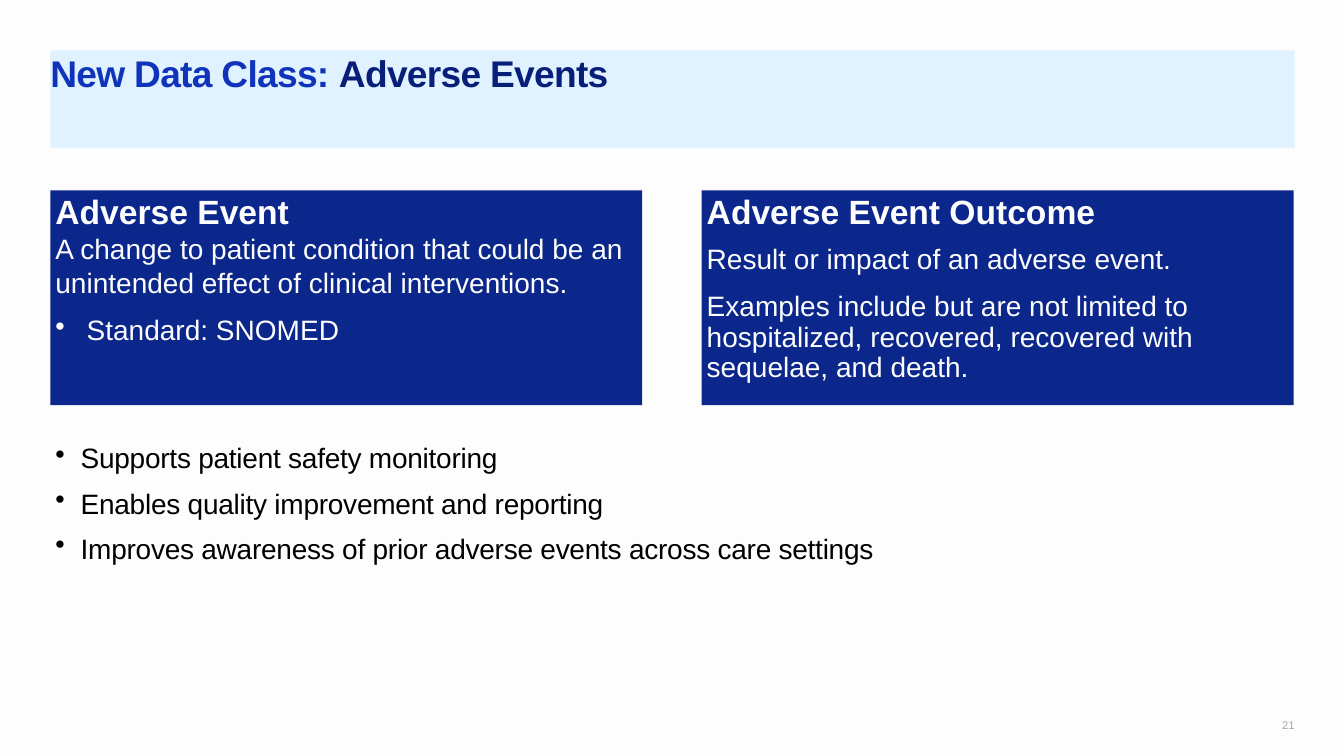
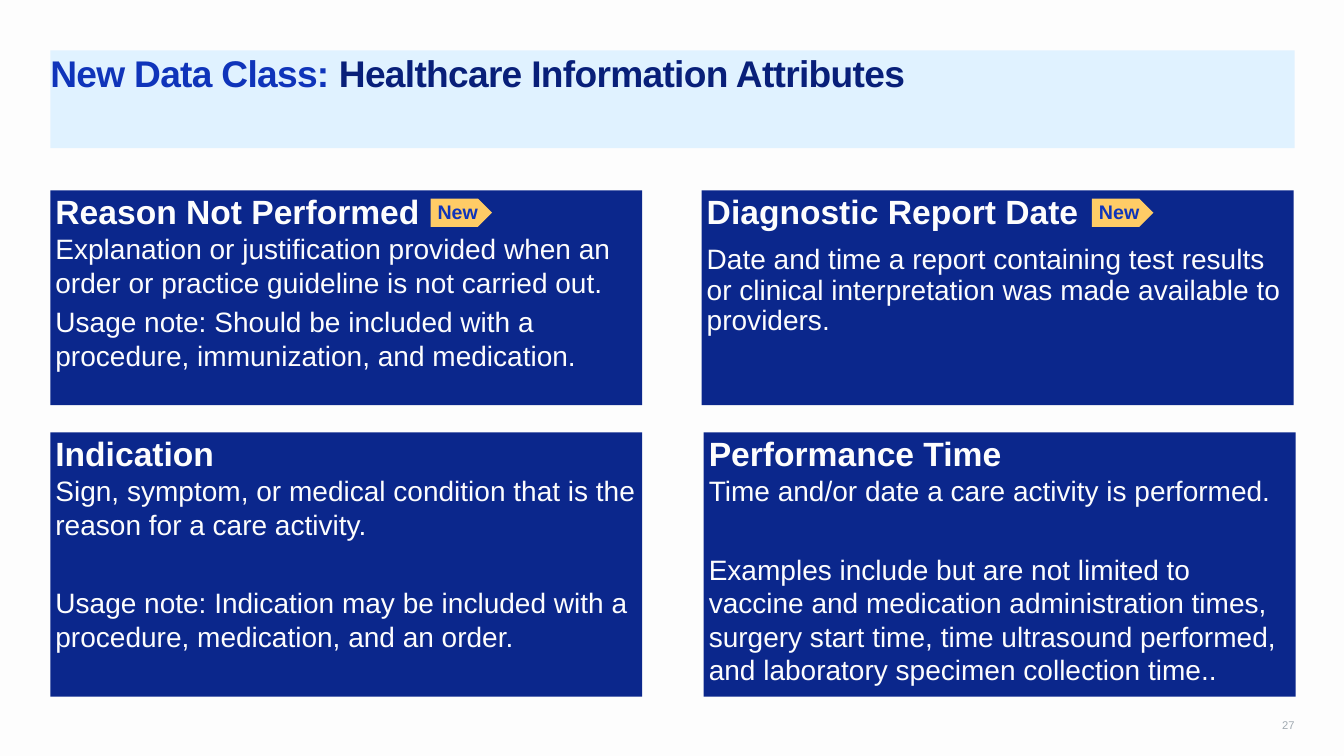
from pptx import Presentation
from pptx.dml.color import RGBColor
from pptx.enum.shapes import MSO_SHAPE
from pptx.enum.text import MSO_ANCHOR, PP_ALIGN
from pptx.oxml.ns import qn
from pptx.util import Pt
from lxml import etree

RECT, TAG = MSO_SHAPE.RECTANGLE, MSO_SHAPE.PENTAGON
TOP, MID, LOW = MSO_ANCHOR.TOP, MSO_ANCHOR.MIDDLE, MSO_ANCHOR.BOTTOM
LEFT, MIDST, RIGHT = PP_ALIGN.LEFT, PP_ALIGN.CENTER, PP_ALIGN.RIGHT

PX = 9144  # 100 px to the inch
PAD = (5, 5, 5, 5)
COLORS = {
    "page": "FDFDFD", "band": "E0F2FF", "card": "0B278C", "tag": "FFCC66",
    "lead": "0F34BA", "topic": "081F79", "white": "FDFDFD",
    "black": "000000", "number": "A1AAB1",
}

# Column and row bounds of the cards: (start, length)
WIDTH, X1, X2 = 587, 50, 696
ROW1, ROW2 = (189, 213), (429, 262)

# Each style: paragraph format, font format, colour
STYLES = {
    "title": ({}, {"size": Pt(26.5), "bold": True}, "lead"),
    "number": ({"alignment": RIGHT, "line_spacing": 0.9},
               {"size": Pt(8)}, "number"),
    "tag": ({"alignment": MIDST, "line_spacing": 0.9},
            {"size": Pt(14), "bold": True}, "lead"),
    "head": ({"line_spacing": 0.9}, {"size": Pt(24), "bold": True}, "white"),
    "body": ({"space_after": Pt(4)}, {"size": Pt(20)}, "white"),
    "apart": ({"space_before": Pt(28), "space_after": Pt(4)},
              {"size": Pt(20)}, "white"),
    "tight": ({"line_spacing": 0.9, "space_before": Pt(10)},
              {"size": Pt(20)}, "white"),
    "loose": ({"line_spacing": 0.9, "space_before": Pt(12)},
              {"size": Pt(20)}, "white"),
    "item": ({"space_before": Pt(6), "space_after": Pt(4)},
             {"size": Pt(20)}, "white"),
    "first": ({"line_spacing": 1.1}, {"size": Pt(20)}, "black"),
    "point": ({"line_spacing": 1.1, "space_before": Pt(6)},
              {"size": Pt(20)}, "black"),
}
INDENTS = {"item": 31, "first": 25, "point": 25}
TRACKS = {"title": -50, "first": -20, "point": -20}


def rgb(name):
    return RGBColor.from_string(COLORS[name])


def assign(target, values):
    for name, value in values.items():
        setattr(target, name, value)


def add_run(para, text, style, color=None):
    _, font, ink = STYLES[style]
    run = para.add_run()
    run.text = text
    assign(run.font, {"name": "Arial", "bold": False, **font})
    run.font.color.rgb = rgb(color or ink)
    if style in TRACKS:
        run.font._element.set("spc", str(TRACKS[style]))


def add_bullet(para, indent):
    props = para._p.get_or_add_pPr()
    props.set("marL", str(indent * PX))
    props.set("indent", str(-indent * PX))
    etree.SubElement(props, qn("a:buChar")).set("char", "•")


def fill_text(shape, lines, pad=PAD, anchor=TOP):
    """Write (style, text) lines and return the last paragraph."""
    frame = shape.text_frame
    sides = ("margin_left", "margin_top", "margin_right", "margin_bottom")
    assign(frame, {side: gap * PX for side, gap in zip(sides, pad)})
    assign(frame, {"word_wrap": True, "vertical_anchor": anchor})
    for i, (style, text) in enumerate(lines):
        para = frame.add_paragraph() if i else frame.paragraphs[0]
        assign(para, {"alignment": LEFT, **STYLES[style][0]})
        if style in INDENTS:
            add_bullet(para, INDENTS[style])
        add_run(para, text, style)
    return para


def add_box(slide, box, color, kind=RECT):
    shape = slide.shapes.add_shape(kind, *(n * PX for n in box))
    shape.shadow.inherit = False
    shape.fill.solid()
    shape.fill.fore_color.rgb = rgb(color)
    shape.line.fill.background()
    return shape


def add_text(slide, box, lines, **options):
    shape = slide.shapes.add_textbox(*(n * PX for n in box))
    fill_text(shape, lines, **options)


def add_card(slide, left, row, head, *lines):
    top, height = row
    card = add_box(slide, (left, top, WIDTH, height), "card")
    fill_text(card, [("head", head), *lines])


def add_tag(slide, left):
    tag = add_box(slide, (left, 197, 61, 28), "tag", TAG)
    fill_text(tag, [("tag", "New")], anchor=MID)


def add_page(deck, topic, number):
    slide = deck.slides.add_slide(deck.slide_layouts[6])
    slide.background.fill.solid()
    slide.background.fill.fore_color.rgb = rgb("page")
    add_text(slide, (1254, 689, 30, 37), [("number", number)],
             pad=(0, 0, 0, 0), anchor=LOW)
    band = add_box(slide, (50, 50, 1234, 97), "band")
    para = fill_text(band, [("title", "New Data Class: ")], pad=(0, 0, 0, 5))
    add_run(para, topic, "title", "topic")
    return slide


def add_events(deck):
    slide = add_page(deck, "Adverse Events", "21")
    add_text(slide, (50, 429, 1233, 258), [
        ("first", "Supports patient safety monitoring"),
        ("point", "Enables quality improvement and reporting"),
        ("point", "Improves awareness of prior adverse events across care "
                  "settings"),
    ])
    add_card(slide, X1, ROW1, "Adverse Event",
             ("body", "A change to patient condition that could be an "
                      "unintended effect of clinical interventions."),
             ("item", "Standard: SNOMED"))
    add_card(slide, X2, ROW1, "Adverse Event Outcome",
             ("tight", "Result or impact of an adverse event."),
             ("loose", "Examples include but are not limited to "
                       "hospitalized, recovered, recovered with sequelae, "
                       "and death."))


def add_traits(deck):
    slide = add_page(deck, "Healthcare Information Attributes", "27")
    add_card(slide, X1, ROW1, "Reason Not Performed",
             ("body", "Explanation or justification provided when an order "
                      "or practice guideline is not carried out."),
             ("body", "Usage note: Should be included with a procedure, "
                      "immunization, and medication."))
    add_card(slide, X2, ROW1, "Diagnostic Report Date",
             ("tight", "Date and time a report containing test results or "
                       "clinical interpretation was made available to "
                       "providers."))
    for left in (427, 1083):
        add_tag(slide, left)
    add_card(slide, X1, ROW2, "Indication",
             ("body", "Sign, symptom, or medical condition that is the "
                      "reason for a care activity."),
             ("apart", "Usage note: Indication may be included with a "
                       "procedure, medication, and an order."))
    add_card(slide, X2 + 2, ROW2, "Performance Time",
             ("body", "Time and/or date a care activity is performed."),
             ("apart", "Examples include but are not limited to vaccine and "
                       "medication administration times, surgery start "
                       "time, time ultrasound performed, and laboratory "
                       "specimen collection time.."))


def main():
    deck = Presentation()
    assign(deck, {"slide_width": 1333 * PX, "slide_height": 750 * PX})
    add_events(deck)
    add_traits(deck)
    deck.save("out.pptx")


if __name__ == "__main__":
    main()
